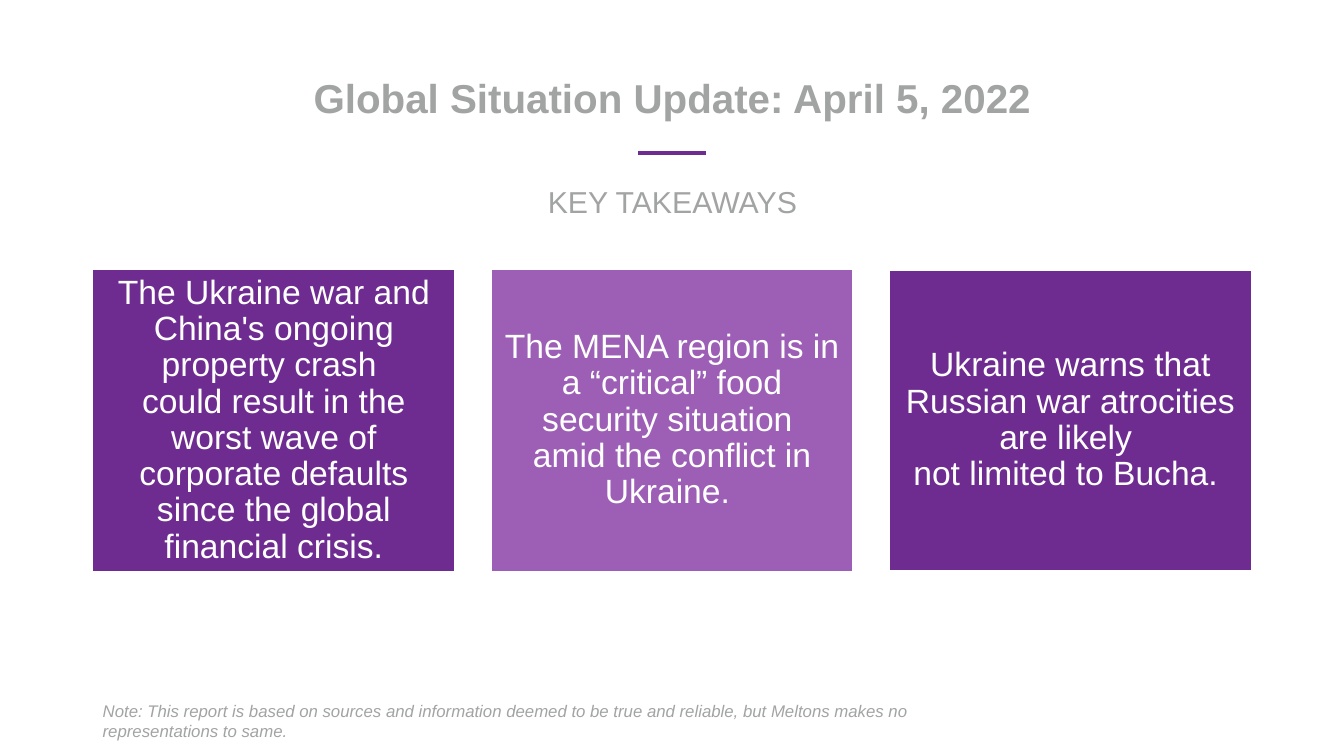
"""Build the key takeaways slide of the global situation update."""
from dataclasses import dataclass

from lxml.etree import SubElement
from pptx import Presentation
from pptx.dml.color import RGBColor
from pptx.enum.shapes import MSO_CONNECTOR as Connector, MSO_SHAPE as Shape
from pptx.enum.text import MSO_ANCHOR as Anchor, PP_ALIGN as Align
from pptx.oxml.ns import qn
from pptx.util import Pt

TITLE = ["Global Situation Update: April 5, 2022"]
SUBTITLE = ["KEY TAKEAWAYS"]
TAKEAWAYS = [
    ["The Ukraine war and China's ongoing property crash ",
     "could result in the worst wave of corporate defaults since the global financial crisis."],
    ["The MENA region is in a “critical” food security situation ",
     "amid the conflict in Ukraine. "],
    ["Ukraine warns that Russian war atrocities are likely ",
     "not limited to Bucha. "],
]
NOTE = ["Note: This report is based on sources and information deemed to be true "
        "and reliable, but Meltons makes no representations to same."]

SLIDE_WIDTH, SLIDE_HEIGHT = 1333, 750
LEFT = 92
TITLE_WIDTH = 1150
CARD_WIDTH, CARD_STEP = 359, 395
CARD_SPANS = [(267, 300), (267, 300), (268, 298)]
RULE_Y = 152


@dataclass(frozen=True)
class Theme:
    font: str = "Arial"
    gray: str = "A2A4A3"
    dark: str = "6E2C91"
    light: str = "9C5FB5"
    white: str = "FFFFFF"
    title: float = 28.8
    subtitle: float = 21.6
    body: float = 24
    note: float = 12


THEME = Theme()


def px(length):
    return length * 9144


def color(code):
    return RGBColor.from_string(code)


def write(box, lines, size, ink, align=Align.CENTER, spacing=0.9, bold=False, italic=False):
    frame = box.text_frame
    frame.word_wrap = True
    frame.vertical_anchor = Anchor.MIDDLE
    para = frame.paragraphs[0]
    para.alignment = align
    para.line_spacing = spacing
    for index, line in enumerate(lines):
        if index:
            para.add_line_break()
        span = para.add_run()
        span.text = line
        font = span.font
        font.name, font.size = THEME.font, Pt(size)
        font.bold, font.italic = bold, italic
        font.color.rgb = color(ink)


def add_text(page, place, lines, size, **style):
    box = page.shapes.add_textbox(*map(px, place))
    write(box, lines, size, THEME.gray, **style)


def add_card(page, index, lines):
    top, height = CARD_SPANS[index]
    place = (LEFT + index * CARD_STEP, top, CARD_WIDTH, height)
    card = page.shapes.add_shape(Shape.RECTANGLE, *map(px, place))
    card.shadow.inherit = False
    card.fill.solid()
    card.fill.fore_color.rgb = color(THEME.light if index % 2 else THEME.dark)
    card.line.color.rgb = color(THEME.white)
    card.line.width = Pt(1)
    frame = card.text_frame
    frame.margin_left = frame.margin_right = px(10)
    frame.margin_top = frame.margin_bottom = px(10)
    write(card, lines, THEME.body, THEME.white)


def add_rule(page):
    rule = page.shapes.add_connector(
        Connector.STRAIGHT, px(633), px(RULE_Y), px(700), px(RULE_Y))
    rule.line.color.rgb = color(THEME.dark)
    rule.line.width = Pt(3)
    SubElement(rule._element.spPr, qn("a:effectLst"))


def main():
    deck = Presentation()
    deck.slide_width, deck.slide_height = px(SLIDE_WIDTH), px(SLIDE_HEIGHT)
    page = deck.slides.add_slide(deck.slide_layouts[6])
    add_text(page, (LEFT, 72, TITLE_WIDTH, 55), TITLE, THEME.title, bold=True)
    add_text(page, (LEFT, 180, TITLE_WIDTH, 44), SUBTITLE, THEME.subtitle)
    for index, lines in enumerate(TAKEAWAYS):
        add_card(page, index, lines)
    add_rule(page)
    add_text(page, (LEFT, 695, 821, 40), NOTE, THEME.note,
             align=Align.LEFT, spacing=1.0, italic=True)
    deck.save("out.pptx")


if __name__ == "__main__":
    main()
